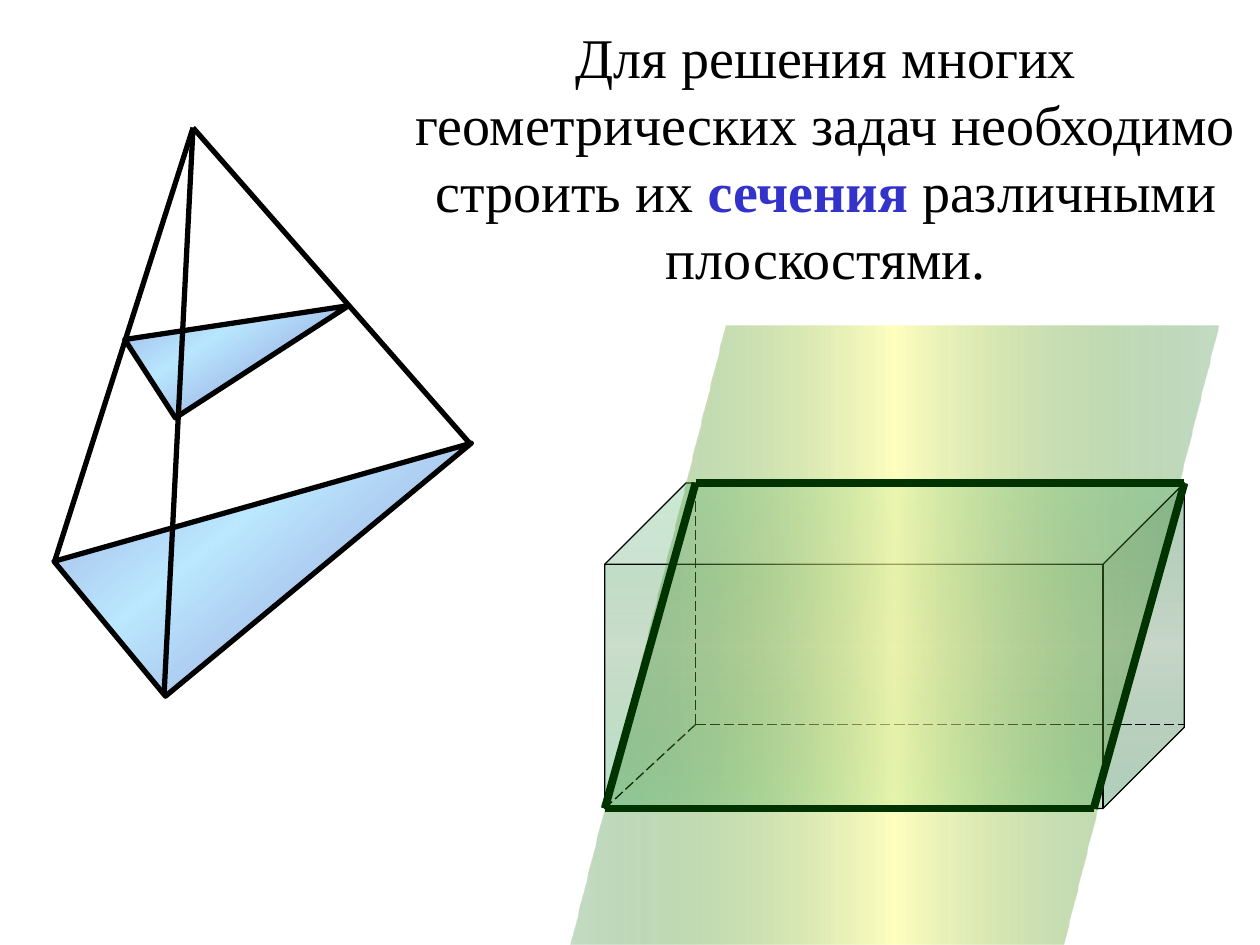
from copy import deepcopy

from lxml import etree
from pptx import Presentation
from pptx.dml.color import RGBColor
from pptx.enum.dml import MSO_LINE
from pptx.enum.shapes import MSO_CONNECTOR, MSO_SHAPE
from pptx.enum.text import MSO_ANCHOR, PP_ALIGN
from pptx.oxml.ns import qn
from pptx.util import Pt

CUBE = MSO_SHAPE.CUBE
SLANT = MSO_SHAPE.PARALLELOGRAM
WEDGE = MSO_SHAPE.RIGHT_TRIANGLE
LINE = MSO_CONNECTOR.STRAIGHT
DASH = MSO_LINE.LONG_DASH
CENTER = PP_ALIGN.CENTER
MIDDLE = MSO_ANCHOR.MIDDLE

BLACK, BLUE, GREEN = "000000", "3333CC", "003300"


def color(code):
    return RGBColor.from_string(code)


def add_run(para, text, size=32, ink=BLACK, bold=False, face="Times New Roman"):
    run = para.add_run()
    run.text = text
    font = run.font
    font.name, font.size, font.bold = face, Pt(size), bold
    font.color.rgb = color(ink)


class Board:
    """Holds the current slide and its drawing style."""

    def __init__(self, slide, ink=BLACK):
        self.slide = slide
        self.ink = ink

    def text(self, box, parts):
        frame = self.slide.shapes.add_textbox(*map(Pt, box)).text_frame
        frame.word_wrap = True
        frame.vertical_anchor = MIDDLE
        para = frame.paragraphs[0]
        para.alignment = CENTER
        for words, style in parts:
            add_run(para, words, **style)

    def solid(self, kind, box, edge, mid, angle=90, width=None, turn=0):
        """Add a shape whose fill runs from edge to mid and back to edge."""
        shape = self.slide.shapes.add_shape(kind, *map(Pt, box))
        shape.shadow.inherit = False
        shape.rotation = turn
        if width:
            shape.line.color.rgb = color(self.ink)
            shape.line.width = Pt(width)
        else:
            shape.line.fill.background()
        fill = shape.fill
        fill.gradient()
        fill.gradient_angle = angle
        stops = shape._element.spPr.find(".//" + qn("a:gsLst"))
        stops.append(deepcopy(stops[0]))
        for i, (code, alpha) in enumerate((edge, mid, edge)):
            stop = fill.gradient_stops[i]
            stop.position = i / 2
            stop.color.rgb = color(code)
            tint = stops[i].find(qn("a:srgbClr"))
            etree.SubElement(tint, qn("a:alpha")).set("val", str(alpha * 1000))
        return shape

    def line(self, start, end, width, ink=None, dash=None):
        link = self.slide.shapes.add_connector(LINE, *map(Pt, start + end))
        link.line.color.rgb = color(ink or self.ink)
        link.line.width = Pt(width)
        if dash:
            link.line.dash_style = dash
        etree.SubElement(link._element.spPr, qn("a:effectLst"))


def main():
    deck = Presentation()
    deck.slide_width, deck.slide_height = Pt(720), Pt(540)
    board = Board(deck.slides.add_slide(deck.slide_layouts[6]))

    # Title
    board.text((224, 0, 496, 179), [
        ("Для решения многих геометрических задач необходимо строить их ", {}),
        ("сечения ", {"ink": BLUE, "bold": True}),
        ("различными плоскостями.", {}),
    ])

    # Box with its hidden edges
    left, top, wide, high = 345.6, 276, 331.2, 186
    back, right, base = 397.5, left + wide, top + high
    inner = (back, 414)
    board.solid(CUBE, (left, top, wide, high),
                ("80CE9E", 51), ("418744", 27), width=0.75)
    for end in ((back, top), (left, base), (right, inner[1])):
        board.line(inner, end, 0.75, dash=DASH)

    # Cutting plane and its section of the box
    board.solid(SLANT, (326, 186, 370, 354),
                ("006600", 23), ("FFFF99", 62), angle=0)
    cut = [(back, top), (right, top), (625, base), (left, base)]
    for start, end in zip(cut, cut[1:] + cut[:1]):
        board.line(start, end, 4.5, ink=GREEN)

    # Pyramid: base, section, side edges
    for box, turn, edge, mid in (
        ((36.7, 237, 226.8, 100), 320.4, 43, 44),
        ((76.3, 157.7, 118, 53.3), 327.1, 44, 46),
    ):
        board.solid(WEDGE, box, ("000099", edge), ("66CCFF", mid),
                    width=3, turn=turn)
    apex = (110.3, 73)
    for foot in ((93.8, 396), (269, 254), (31, 321.5)):
        board.line(apex, foot, 3)

    deck.save("out.pptx")


if __name__ == "__main__":
    main()
